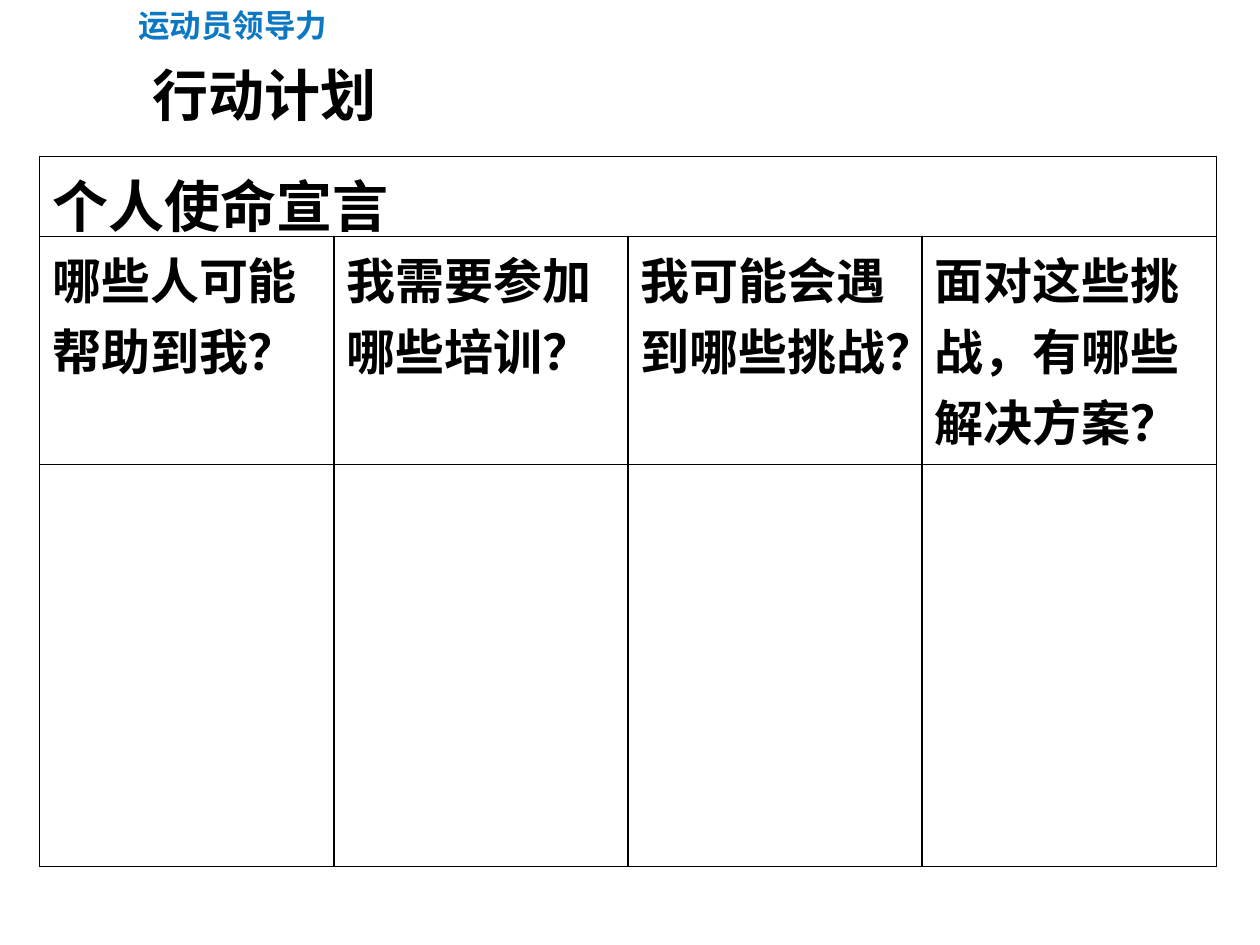
from lxml import etree
from pptx import Presentation
from pptx.dml.color import RGBColor
from pptx.enum.shapes import MSO_SHAPE
from pptx.enum.text import MSO_ANCHOR, MSO_AUTO_SIZE, PP_ALIGN
from pptx.oxml.ns import qn
from pptx.util import Cm, Pt

RECT = MSO_SHAPE.RECTANGLE
TOP, MID = MSO_ANCHOR.TOP, MSO_ANCHOR.MIDDLE
FIXED, GROW = MSO_AUTO_SIZE.NONE, MSO_AUTO_SIZE.SHAPE_TO_FIT_TEXT
LEFT = PP_ALIGN.LEFT
FONT = "Noto Sans CJK SC"
COLORS = {"ink": "000000", "blue": "0C77C3", "paper": "FFFFFF"}


def write(frame, text, size, color):
    frame.text = text
    para = frame.paragraphs[0]
    para.alignment = LEFT
    font = para.runs[0].font
    font.size = Pt(size)
    font.bold = True
    font.color.rgb = RGBColor.from_string(COLORS[color])
    font.name = FONT
    props = para.runs[0]._r.get_or_add_rPr()
    etree.SubElement(props, qn("a:ea"), typeface=FONT)


def frame_cell(cell):
    props = cell._tc.get_or_add_tcPr()
    for side in ("lnL", "lnR", "lnT", "lnB"):
        line = etree.SubElement(props, qn(f"a:{side}"), w=str(Pt(1)))
        fill = etree.SubElement(line, qn("a:solidFill"))
        etree.SubElement(fill, qn("a:srgbClr"), val=COLORS["ink"])
    cell.fill.background()


deck = Presentation()
deck.slide_width, deck.slide_height = Cm(25.4), Cm(19.05)
slide = deck.slides.add_slide(deck.slide_layouts[5])

title = slide.shapes.title
title.left, title.top = Cm(2.82), Cm(1.24)
title.width, title.height = Cm(16.54), Cm(0.81)
frame = title.text_frame
frame.auto_size = FIXED
frame.vertical_anchor = TOP
write(frame, "行动计划", 32, "ink")
frame.paragraphs[0].line_spacing = 0.9

heads = [
    "哪些人可能帮助到我？",
    "我需要参加哪些培训？",
    "我可能会遇到哪些挑战？",
    "面对这些挑战，有哪些解决方案？",
]
rows = [1.61, 4.6, 8.1]
wide = 5.93
grid = slide.shapes.add_table(
    len(rows), len(heads), Cm(0.8), Cm(3.15), Cm(wide * len(heads)), Cm(sum(rows))
)
table = grid.table
table.first_row = table.horz_banding = False
for row, high in zip(table.rows, rows):
    row.height = Cm(high)
for col in table.columns:
    col.width = Cm(wide)
for cell in table.iter_cells():
    frame_cell(cell)
top = table.cell(0, 0)
top.merge(table.cell(0, len(heads) - 1))
top.margin_bottom = Cm(-0.15)
write(top.text_frame, "个人使命宣言", 32, "ink")
for i, head in enumerate(heads):
    write(table.cell(1, i).text_frame, head, 28, "ink")

label = slide.shapes.add_shape(RECT, Cm(2.54), 0, Cm(4.78), Cm(1.02))
label.shadow.inherit = False
label.fill.solid()
label.fill.fore_color.rgb = RGBColor.from_string(COLORS["paper"])
label.line.fill.background()
frame = label.text_frame
frame.word_wrap = True
frame.auto_size = GROW
frame.vertical_anchor = MID
write(frame, "运动员领导力", 18, "blue")

deck.save("out.pptx")
